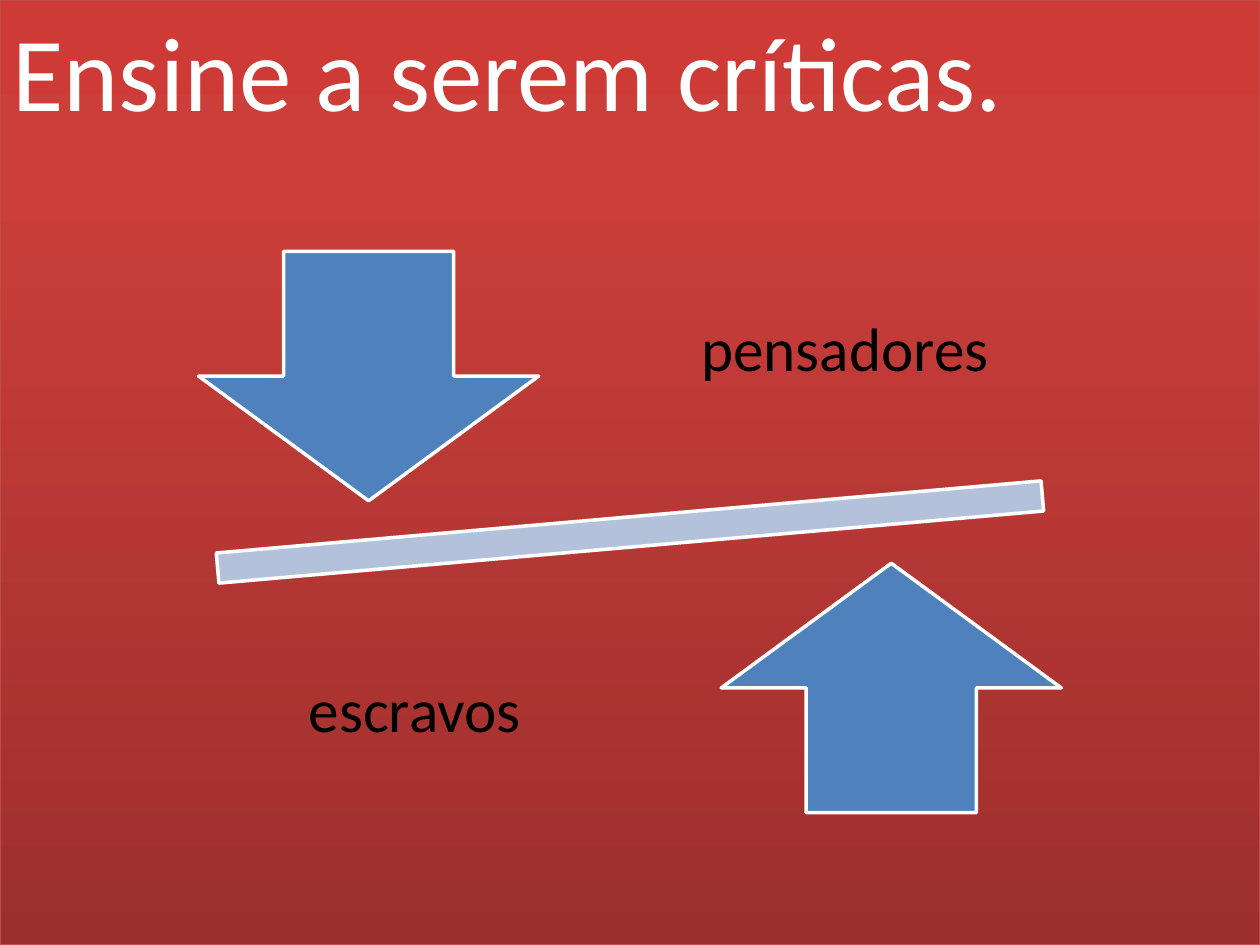
from copy import deepcopy
from dataclasses import dataclass

from lxml.etree import SubElement
from pptx import Presentation
from pptx.dml.color import RGBColor as RGB
from pptx.enum.shapes import MSO_SHAPE as Shape
from pptx.enum.text import MSO_ANCHOR as Anchor, MSO_AUTO_SIZE as AutoSize, PP_ALIGN as Align
from pptx.oxml.ns import qn
from pptx.util import Inches, Pt


@dataclass(frozen=True)
class Theme:
    font: str = "Calibri"
    title_size: int = 60
    label_size: int = 35
    white: str = "FFFFFF"
    black: str = "000000"
    arrow: str = "4F81BD"
    bar: str = "B3C1DB"
    edge: str = "BF4C48"
    panel: tuple = ((0, "9C2F2D"), (0.8, "CB3E3A"), (1, "CE3B37"))


T = Theme()


def rgb(value):
    return RGB.from_string(value)


def share(box, x, y, w, h):
    left, top, width, height = box
    return (int(left + x * width), int(top + y * height),
            int(w * width), int(h * height))


def place(sp, box):
    sp.left, sp.top, sp.width, sp.height = box


def write(tf, text, size, color, align=Align.LEFT, anchor=Anchor.TOP,
          spacing=None, inset=None):
    tf.word_wrap = True
    tf.auto_size = AutoSize.NONE
    tf.vertical_anchor = anchor
    if inset is not None:
        tf.margin_left = tf.margin_right = tf.margin_top = tf.margin_bottom = Inches(inset)
    p = tf.paragraphs[0]
    p.alignment = align
    if spacing is not None:
        p.line_spacing = spacing
    r = p.add_run()
    r.text = text
    r.font.name = T.font
    r.font.size = Pt(size)
    r.font.color.rgb = rgb(color)
    return p


def outline(sp, color, width):
    sp.line.color.rgb = rgb(color)
    sp.line.width = Pt(width)
    sp.shadow.inherit = False


def fill_gradient(sp, stops, angle):
    sp.fill.gradient()
    sp.fill.gradient_angle = angle
    gs_list = sp._element.spPr.find(".//" + qn("a:gsLst"))
    while len(gs_list) < len(stops):
        gs_list.append(deepcopy(gs_list[-1]))
    for stop, (position, color) in zip(sp.fill.gradient_stops, stops):
        stop.position = position
        stop.color.rgb = rgb(color)


def title_panel(s, box, text):
    s.shapes.title._element.getparent().remove(s.shapes.title._element)
    body = s.placeholders[1]
    place(body, box)
    fill_gradient(body, T.panel, 90)
    outline(body, T.edge, 0.75)
    p = write(body.text_frame, text, T.title_size, T.white)
    pPr = p._p.get_or_add_pPr()
    pPr.set("marL", "0")
    pPr.set("indent", "0")
    SubElement(pPr, qn("a:buNone"))


def solid(shapes, kind, box, color):
    sp = shapes.add_shape(kind, *box)
    sp.fill.solid()
    sp.fill.fore_color.rgb = rgb(color)
    outline(sp, T.white, 2)
    return sp


def balance(s, box, upper, lower):
    shapes = s.shapes.add_group_shape().shapes
    bar = solid(shapes, Shape.MATH_MINUS, share(box, 0, 0.397, 1, 0.206), T.bar)
    bar.rotation = 355
    arrow_w, arrow_h, arrow_x, arrow_y = 0.302, 0.4, 0.117, 0.05
    label_w, label_h, label_x = 0.322, 0.42, 0.53
    sides = (
        (Shape.DOWN_ARROW, arrow_x, arrow_y, upper, label_x, 0),
        (Shape.UP_ARROW, 1 - arrow_x - arrow_w, 1 - arrow_y - arrow_h,
         lower, 1 - label_x - label_w, 1 - label_h),
    )
    for kind, ax, ay, text, tx, ty in sides:
        solid(shapes, kind, share(box, ax, ay, arrow_w, arrow_h), T.arrow)
        label = shapes.add_textbox(*share(box, tx, ty, label_w, label_h))
        write(label.text_frame, text, T.label_size, T.black, align=Align.CENTER,
              anchor=Anchor.MIDDLE, spacing=0.9, inset=0.27)


def main():
    prs = Presentation()
    prs.slide_width, prs.slide_height = Inches(10), Inches(7.5)
    s = prs.slides.add_slide(prs.slide_layouts[1])
    s.background.fill.solid()
    s.background.fill.fore_color.rgb = rgb(T.black)
    page = (0, 0, prs.slide_width, prs.slide_height)
    title_panel(s, page, "Ensine a serem críticas.")
    balance(s, share(page, 0.053, 0.233, 0.894, 0.66), "pensadores", "escravos")
    prs.save("out.pptx")


if __name__ == "__main__":
    main()
